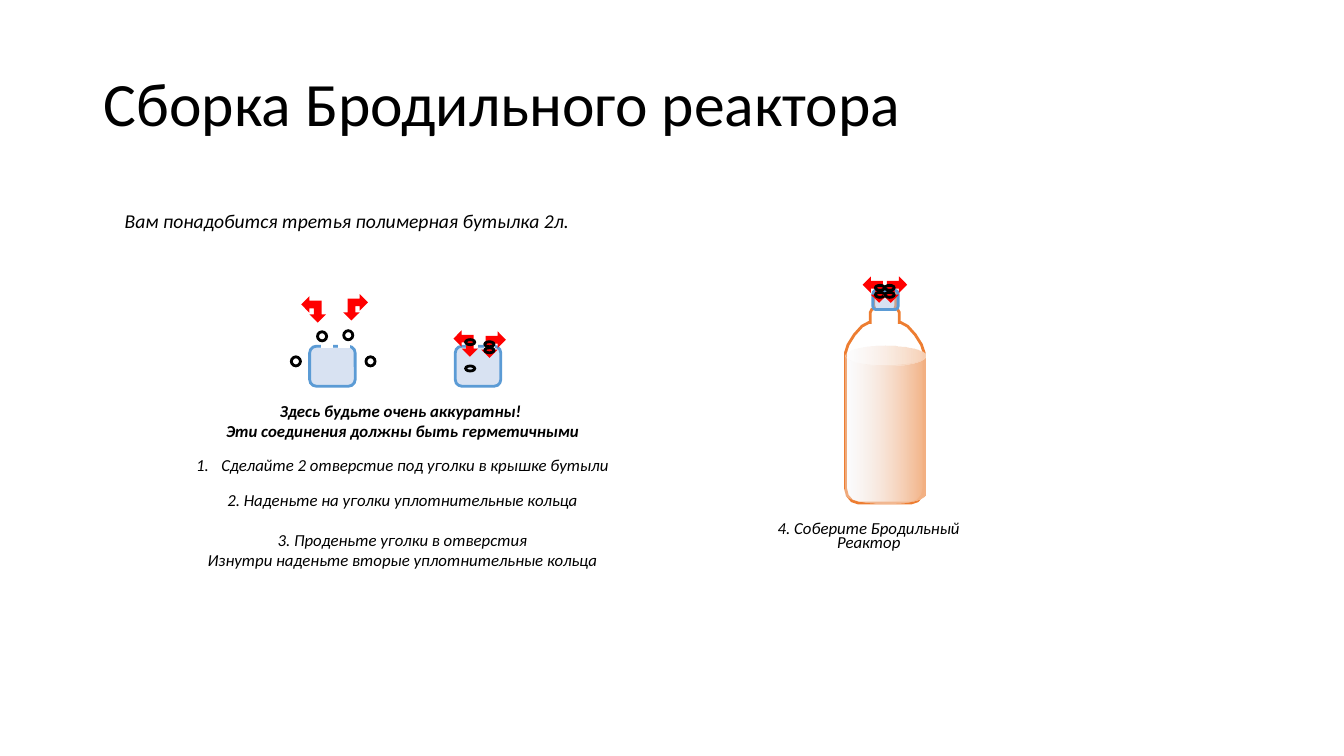
from lxml.etree import SubElement
from pptx import Presentation
from pptx.dml.color import RGBColor
from pptx.enum.shapes import MSO_CONNECTOR, MSO_SHAPE
from pptx.enum.text import MSO_ANCHOR, MSO_AUTO_SIZE, PP_ALIGN
from pptx.oxml.ns import qn
from pptx.util import Pt

COLORS = {
    "text": "000000",
    "ring": "000000",
    "slot": "FFFFFF",
    "cap": "B4C7E7",
    "cap_edge": "5B9BD5",
    "elbow": "FF0000",
    "bottle": "ED7D31",
    "foam": "F6F8FC",
    "mash": "F4B183",
}


def color(name):
    return RGBColor.from_string(COLORS[name])


def set_alpha(shape, percent):
    tone = next(shape.element.spPr.iter(qn("a:srgbClr")))
    SubElement(tone, qn("a:alpha"), val=str(percent * 1000))


def write(para, text, size=12, bold=False, italic=True, align=PP_ALIGN.CENTER,
          leading=None, before=0, numbered=False):
    para.alignment = align
    para.space_before = Pt(before)
    if leading:
        para.line_spacing = leading
    if numbered:
        properties = para._p.get_or_add_pPr()
        properties.set("marL", str(Pt(18)))
        properties.set("indent", str(-Pt(18)))
        SubElement(properties, qn("a:buFont"), typeface="+mj-lt")
        SubElement(properties, qn("a:buAutoNum"), type="arabicPeriod")
    span = para.add_run()
    span.text = text
    span.font.name = "Calibri"
    span.font.size = Pt(size)
    span.font.bold = bold
    span.font.italic = italic
    span.font.color.rgb = color("text")


def curve(start, first, second, end, steps):
    points = []
    for step in range(1, steps + 1):
        t = step / steps
        weights = ((1 - t) ** 3, 3 * t * (1 - t) ** 2, 3 * t * t * (1 - t), t ** 3)
        corners = (start, first, second, end)
        points.append(tuple(sum(w * c[axis] for w, c in zip(weights, corners))
                            for axis in (0, 1)))
    return points


class Drawing:
    line_width = 2
    slot_width = 3.25

    def __init__(self, page):
        self.page = page
        self.shapes = page.shapes

    def open_group(self):
        self.shapes = self.page.shapes.add_group_shape().shapes

    def close_group(self):
        self.shapes = self.page.shapes

    def text(self, left, top, width, height, lines, grow=True, anchor=MSO_ANCHOR.TOP):
        box = self.shapes.add_textbox(Pt(left), Pt(top), Pt(width), Pt(height))
        frame = box.text_frame
        frame.word_wrap = True
        frame.auto_size = MSO_AUTO_SIZE.SHAPE_TO_FIT_TEXT if grow else MSO_AUTO_SIZE.NONE
        frame.vertical_anchor = anchor
        for index, line in enumerate(lines):
            para = frame.add_paragraph() if index else frame.paragraphs[0]
            write(para, **line)

    def finish(self, shape, fill=None, edge=None):
        shape.shadow.inherit = False
        if fill:
            shape.fill.solid()
            shape.fill.fore_color.rgb = color(fill)
        else:
            shape.fill.background()
        if edge:
            shape.line.color.rgb = color(edge)
            shape.line.width = Pt(self.line_width)
            SubElement(shape.element.spPr.find(qn("a:ln")), qn("a:miter"), lim="800000")
        else:
            shape.line.fill.background()
        return shape

    def preset(self, kind, left, top, width, height, fill=None, edge=None):
        shape = self.shapes.add_shape(kind, Pt(left), Pt(top), Pt(width), Pt(height))
        return self.finish(shape, fill, edge)

    def cap(self, left, top, width, height):
        shape = self.preset(MSO_SHAPE.ROUNDED_RECTANGLE, left, top, width, height,
                            "cap", "cap_edge")
        set_alpha(shape, 51)

    def slot(self, left, top, width=8.5):
        line = self.shapes.add_connector(MSO_CONNECTOR.STRAIGHT, Pt(left), Pt(top),
                                         Pt(left + width), Pt(top))
        line.line.color.rgb = color("slot")
        line.line.width = Pt(self.slot_width)
        SubElement(line.element.spPr, qn("a:effectLst"))

    def slotted_cap(self, left, top=247.3):
        self.open_group()
        self.cap(left, top, 32.5, 28.6)
        self.slot(left + 8, top - 0.4)
        self.slot(left + 20.2, top)
        self.close_group()

    def ring(self, left, top, height=6.5):
        self.preset(MSO_SHAPE.OVAL, left, top, 6.5, height, edge="ring")

    def flat_ring(self, left, top):
        self.ring(left, top, 3.6)

    def elbow(self, left, top, mirrored=False):
        shape = self.preset(MSO_SHAPE.LEFT_UP_ARROW, left, top, 15, 13.8,
                            "elbow", "elbow")
        shape.rotation = 90 if mirrored else 270
        if mirrored:
            shape.element.spPr.find(qn("a:xfrm")).set("flipH", "1")

    def bottle(self, axis):
        half = [(5.8, 207.4)]
        half += curve(half[-1], (7.2, 207.4), (7.9, 208.6), (7.9, 209.5), 1)
        half += [(7.9, 218.2), (7.2, 220.3), (9.2, 221), (10.4, 223.2)]
        half += [(10.4, 230.4), (11.5, 230.4)]
        half += curve(half[-1], (16.6, 230.4), (28.1, 246.2), (28.1, 252), 4)
        half += [(28.1, 348.5)]
        half += curve(half[-1], (28.1, 354.3), (23.8, 359.3), (18.7, 359.3), 3)
        outline = [(axis + x, y) for x, y in half]
        outline += [(axis - x, y) for x, y in reversed(half)]
        points = [(Pt(x), Pt(y)) for x, y in outline]
        builder = self.shapes.build_freeform(*points[0])
        builder.add_line_segments(points[1:], close=True)
        self.finish(builder.convert_to_shape(), edge="bottle")

    def mash(self, left, top, width, height):
        can = self.preset(MSO_SHAPE.CAN, left, top, width, height)
        can.adjustments[0] = 0.244
        can.fill.gradient()
        can.fill.gradient_angle = 0
        for stop, name, position in zip(can.fill.gradient_stops, ("foam", "mash"), (0, 1)):
            stop.color.rgb = color(name)
            stop.position = position
        set_alpha(can, 36)


def main():
    deck = Presentation()
    deck.slide_width, deck.slide_height = Pt(960), Pt(540)
    drawing = Drawing(deck.slides.add_slide(deck.slide_layouts[6]))

    drawing.slotted_cap(325.2)
    drawing.text(67, -0.2, 617, 152, [
        dict(text="Сборка Бродильного реактора", size=44, italic=False,
             align=PP_ALIGN.LEFT, leading=0.9),
    ], grow=False, anchor=MSO_ANCHOR.MIDDLE)
    drawing.text(82, 145.4, 440, 24, [
        dict(text="Вам понадобится третья полимерная бутылка 2л.", size=14,
             align=PP_ALIGN.LEFT),
    ])
    drawing.text(112.3, 282.6, 350.6, 127.4, [
        dict(text="Здесь будьте очень аккуратны! ", bold=True),
        dict(text="Эти соединения должны быть герметичными", bold=True),
        dict(text="Сделайте 2 отверстие под уголки в крышке бутыли",
             leading=Pt(10), before=14.6, numbered=True),
        dict(text="2. Наденьте на уголки уплотнительные кольца", before=10),
        dict(text="3. Проденьте уголки в отверстия", before=14.6),
        dict(text="Изнутри наденьте вторые уплотнительные кольца"),
    ])

    drawing.elbow(216, 214.6)
    drawing.ring(226.8, 237)
    drawing.elbow(324.7, 239)
    for top in (242.6, 261.4):
        drawing.flat_ring(332.6, top)

    drawing.bottle(632)
    drawing.mash(604.1, 247.2, 56.9, 112.3)
    drawing.text(540.6, 370.8, 160, 27.4, [
        dict(text=line, leading=Pt(10))
        for line in ("4. Соберите Бродильный", "Реактор")
    ])

    drawing.slotted_cap(221.2)
    drawing.elbow(247, 213.1, mirrored=True)
    drawing.ring(245.5, 236.2)
    drawing.elbow(345.6, 239.8, mirrored=True)
    for top in (248.4, 244.1):
        drawing.flat_ring(346.3, top)
    for left in (208.1, 261.4):
        drawing.ring(left, 254.9)

    drawing.open_group()
    drawing.cap(623.5, 207.4, 18, 13.7)
    for left, ring_left, mirrored in ((617, 625.3, False), (632.2, 632.2, True)):
        drawing.elbow(left, 200.5, mirrored)
        for top in (203.8, 208.8):
            drawing.flat_ring(ring_left, top)
    drawing.close_group()

    deck.save("out.pptx")


if __name__ == "__main__":
    main()
